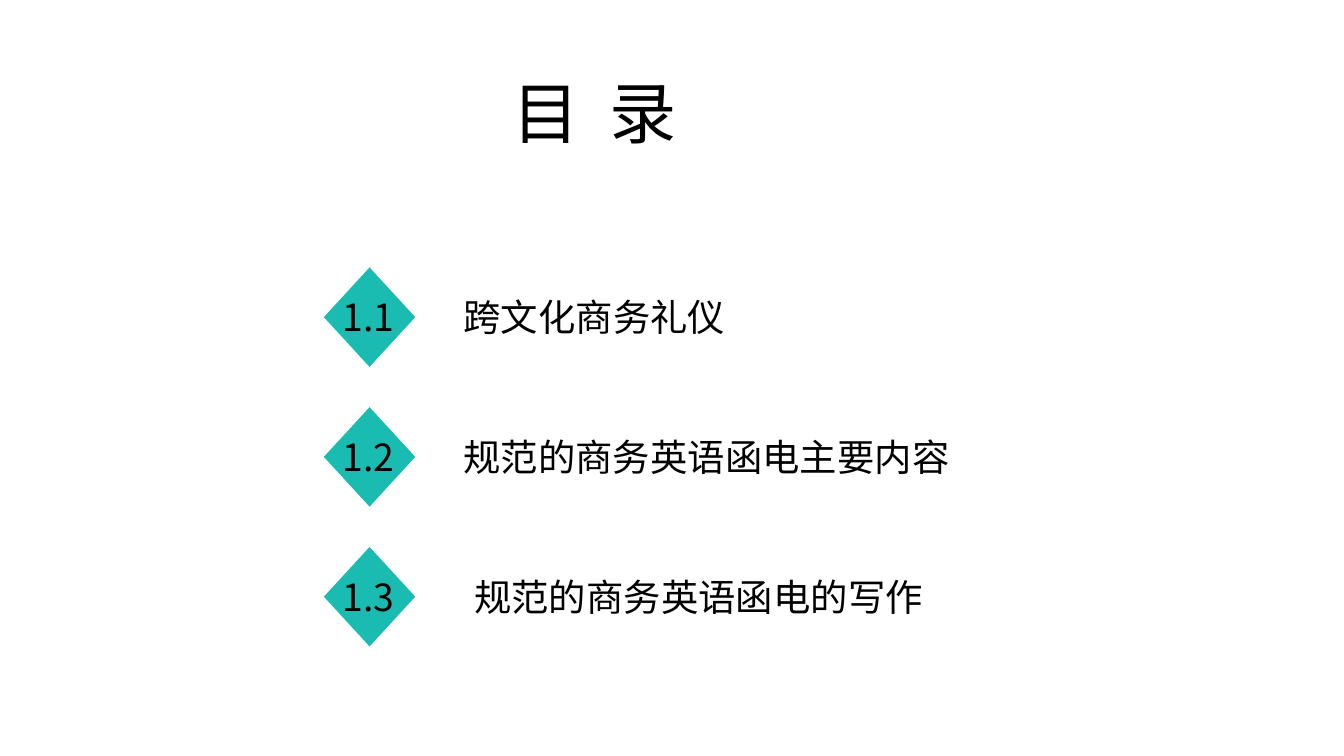
from pptx import Presentation
from pptx.dml.color import RGBColor
from pptx.enum.shapes import MSO_SHAPE as Shape
from pptx.enum.text import MSO_ANCHOR as Anchor, MSO_AUTO_SIZE as AutoSize, PP_ALIGN as Align
from pptx.oxml.ns import qn
from pptx.util import Inches, Pt

TEAL = RGBColor(0x1A, 0xBB, 0xB1)
BLACK = RGBColor(0, 0, 0)
FONT = "Noto Sans CJK SC"

FIRST_ROW, ROW_PITCH = 1.99, 1.04
DIAMOND_LEFT, DIAMOND_WIDTH, DIAMOND_HEIGHT = 2.41, 0.68, 0.74
NUMBER_LEFT, NUMBER_WIDTH = 2.45, 0.63
TEXT_HEIGHT = 0.44
TEXT_OFFSET = (DIAMOND_HEIGHT - TEXT_HEIGHT) / 2

SECTIONS = [
    ("1.1", "跨文化商务礼仪", 3.35, 3.48),
    ("1.2", "规范的商务英语函电主要内容", 3.35, 3.86),
    ("1.3", "规范的商务英语函电的写作", 3.43, 3.84),
]


def write(shape, text, size):
    frame = shape.text_frame
    frame.text = text
    frame.word_wrap = True
    frame.auto_size = AutoSize.SHAPE_TO_FIT_TEXT
    frame.vertical_anchor = Anchor.TOP
    paragraph = frame.paragraphs[0]
    paragraph.alignment = Align.LEFT
    font = paragraph.runs[0].font
    font.size = Pt(size)
    font.color.rgb = BLACK
    font.name = FONT
    properties = paragraph.runs[0]._r.get_or_add_rPr()
    east_asian = properties.makeelement(qn("a:ea"), {"typeface": FONT})
    properties.find(qn("a:latin")).addnext(east_asian)


def add_text(shapes, text, left, top, width):
    box = shapes.add_textbox(Inches(left), Inches(top), Inches(width), Inches(TEXT_HEIGHT))
    write(box, text, 20)


presentation = Presentation()
presentation.slide_width = Inches(10)
presentation.slide_height = presentation.slide_width * 9 // 16
slide = presentation.slides.add_slide(presentation.slide_layouts[5])

title = slide.shapes.title
title.left, title.top = Inches(3.71), Inches(0.48)
title.width, title.height = Inches(2.05), Inches(0.71)
write(title, "目  录", 36)

markers = slide.shapes.add_group_shape()
for row, (number, label, label_left, label_width) in enumerate(SECTIONS):
    top = FIRST_ROW + row * ROW_PITCH
    diamond = markers.shapes.add_shape(
        Shape.DIAMOND, Inches(DIAMOND_LEFT), Inches(top), Inches(DIAMOND_WIDTH), Inches(DIAMOND_HEIGHT)
    )
    diamond.shadow.inherit = False
    diamond.fill.solid()
    diamond.fill.fore_color.rgb = TEAL
    diamond.line.fill.background()
    add_text(markers.shapes, number, NUMBER_LEFT, top + TEXT_OFFSET, NUMBER_WIDTH)
    add_text(slide.shapes, label, label_left, top + TEXT_OFFSET, label_width)

presentation.save("out.pptx")
